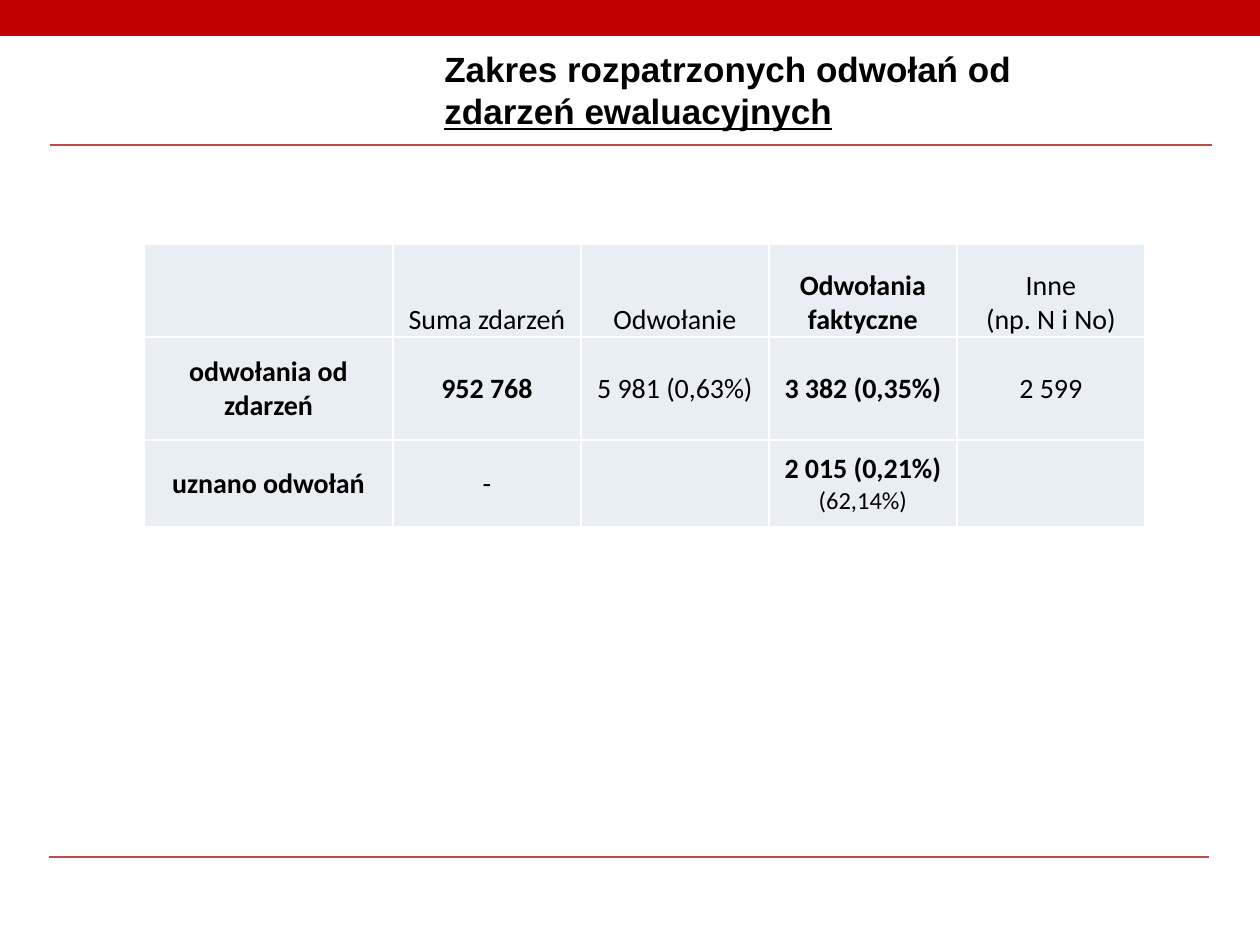
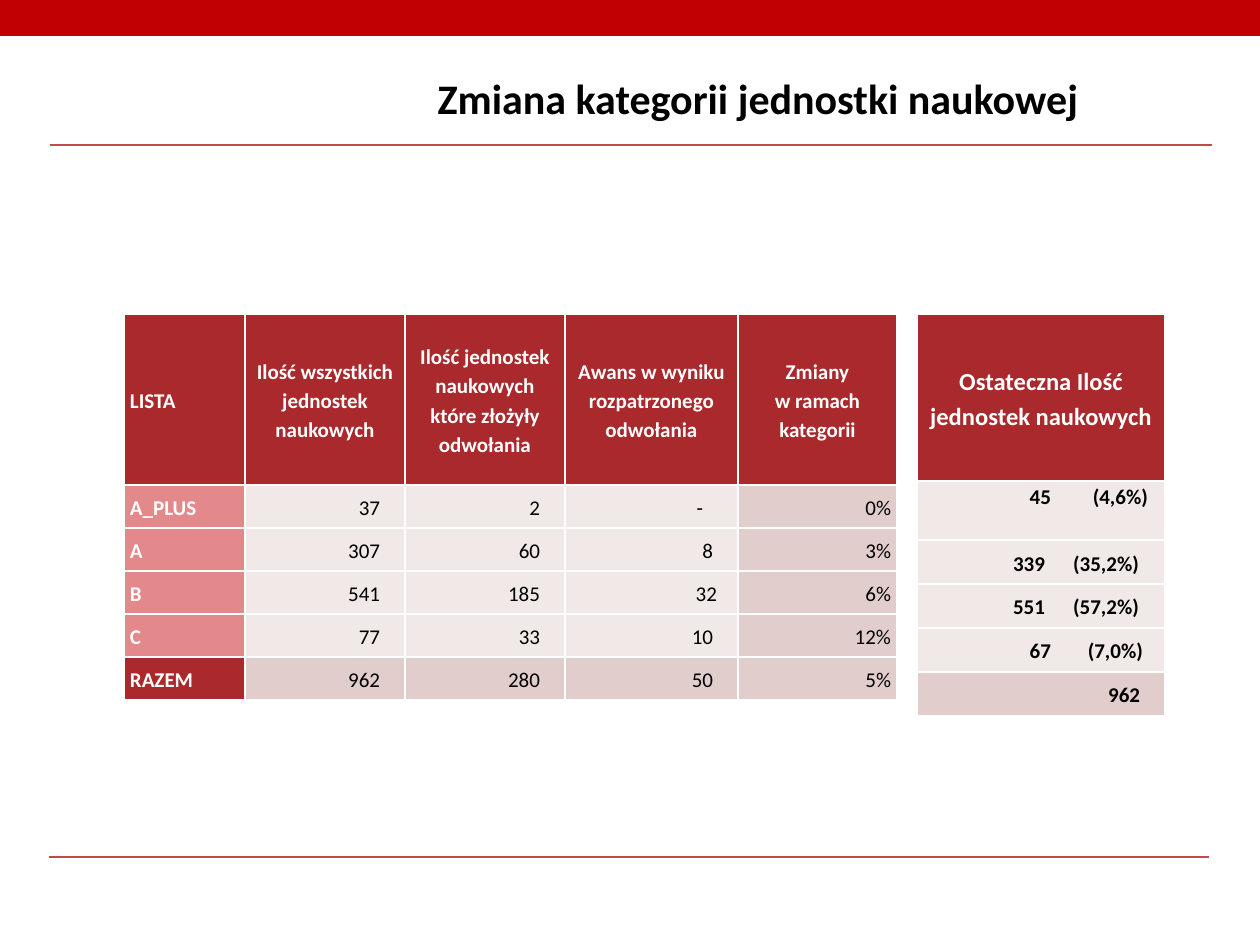
from pptx import Presentation
from pptx.dml.color import RGBColor
from pptx.enum.shapes import MSO_CONNECTOR as CONNECTOR, MSO_SHAPE as SHAPE
from pptx.enum.text import MSO_ANCHOR as ANCHOR, PP_ALIGN as ALIGN
from pptx.oxml.ns import qn
from pptx.util import Pt
from lxml.etree import SubElement

SCALE = 914400 / 126
WIDTH, HEIGHT = 1260, 945

BAND, RULE = "C00000", "BF4C48"
BLACK, WHITE = "000000", "FFFFFF"
PALE_BLUE = "E9EDF4"
DARK_RED, SOFT_RED = "AA292D", "E3898B"
PALE_PINK, PINK = "F1E8E8", "E2CDCD"

BOLD = {"bold": True}

APPEALS_TITLE = ["Zakres rozpatrzonych odwołań od",
                 ("zdarzeń ewaluacyjnych", {"underline": True})]
# Each cell is a list of lines; a line is a text or a (text, format) pair.
APPEALS = [
    [[], ["Suma zdarzeń"], ["Odwołanie"], [("Odwołania faktyczne", BOLD)],
     ["Inne", "(np. N i No)"]],
    [[("odwołania od zdarzeń", BOLD)], [("952 768", BOLD)], ["5 981 (0,63%)"],
     [("3 382 (0,35%)", BOLD)], ["2 599"]],
    [[("uznano odwołań", BOLD)], ["-"], [],
     [("2 015 (0,21%)", BOLD), ("(62,14%)", {"size": Pt(14)})], []],
]

CATEGORY_TITLE = ["Zmiana kategorii\u00a0jednostki\u00a0naukowej"]
CATEGORY_HEADER = [["LISTA"], ["Ilość wszystkich jednostek naukowych"],
                   ["Ilość jednostek naukowych które złożyły odwołania"],
                   ["Awans w wyniku rozpatrzonego odwołania"],
                   ["Zmiany", "w ramach kategorii"]]
CATEGORIES = [
    ("A_PLUS", "37", "2", "-", "0%"),
    ("A", "307", "60", "8", "3%"),
    ("B", "541", "185", "32", "6%"),
    ("C", "77", "33", "10", "12%"),
    ("RAZEM", "962", "280", "50", "5%"),
]
FINAL_HEADER = "Ostateczna Ilość jednostek naukowych"
# Count, share, and the right-aligned tab stops of both in px
FINAL_COUNTS = [
    ("45", "(4,6%)", (128, 225)),
    ("339", "(35,2%)", (122, 216)),
    ("551", "(57,2%)", (122, 216)),
    ("67", "(7,0%)", (128, 220)),
]
FINAL_TOTAL = "962"


def px(length):
    return round(length * SCALE)


def rgb(value):
    return RGBColor.from_string(value)


def apply(target, values):
    for name, value in values.items():
        setattr(target, name, value)


def write_lines(frame, lines, align=ALIGN.LEFT, spacing=1.0, tabs=(), color=BLACK, **font):
    """Write one paragraph per line, each with the shared font and its own changes."""
    for number, line in enumerate(lines):
        text, changes = (line, {}) if isinstance(line, str) else line
        para = frame.paragraphs[0] if number == 0 else frame.add_paragraph()
        apply(para, {"alignment": align, "line_spacing": spacing})
        if tabs:
            stops = SubElement(para._p.get_or_add_pPr(), qn("a:tabLst"))
            for stop in tabs:
                SubElement(stops, qn("a:tab"), pos=str(px(stop)), algn="r")
        span = para.add_run()
        span.text = text
        apply(span.font, {"name": "Calibri", **font, **changes})
        span.font.color.rgb = rgb(color)


def add_rule(page, left, right, y):
    rule = page.shapes.add_connector(CONNECTOR.STRAIGHT, px(left), px(y), px(right), px(y))
    rule.line.color.rgb = rgb(RULE)
    rule.line.width = Pt(0.75)
    SubElement(rule._element.spPr, qn("a:effectLst"))


def add_page(deck):
    """Add a blank page with the red band and both rules."""
    page = deck.slides.add_slide(deck.slide_layouts[6])
    band = page.shapes.add_shape(SHAPE.RECTANGLE, 0, 0, px(WIDTH), px(36))
    band.shadow.inherit = False
    band.fill.solid()
    band.fill.fore_color.rgb = rgb(BAND)
    band.line.fill.background()
    add_rule(page, 50, 1212, 145)
    add_rule(page, 49, 1209, 857)
    return page


def add_title(page, place, lines, wrap=True, **style):
    box = page.shapes.add_textbox(*map(px, place))
    apply(box.text_frame, {"word_wrap": wrap, "vertical_anchor": ANCHOR.MIDDLE})
    write_lines(box.text_frame, lines, bold=True, **style)


def add_grid(page, left, top, widths, heights):
    shape = page.shapes.add_table(len(heights), len(widths), px(left), px(top),
                                  px(sum(widths)), px(sum(heights)))
    table = shape.table
    apply(table, {"first_row": False, "horz_banding": False})
    for column, width in zip(table.columns, widths):
        column.width = px(width)
    for row, height in zip(table.rows, heights):
        row.height = px(height)
    return table


def fill_cell(cell, lines, fill, margins, anchor=ANCHOR.MIDDLE, **style):
    """Set white borders, fill, margins (left, top, right, bottom) and text."""
    properties = cell._tc.get_or_add_tcPr()
    for side in ("lnL", "lnR", "lnT", "lnB"):
        line = SubElement(properties, qn(f"a:{side}"), w=str(Pt(1)))
        SubElement(SubElement(line, qn("a:solidFill")), qn("a:srgbClr"), val=WHITE)
    cell.fill.solid()
    cell.fill.fore_color.rgb = rgb(fill)
    sides = ("margin_left", "margin_top", "margin_right", "margin_bottom")
    apply(cell, dict(zip(sides, map(px, margins))))
    cell.vertical_anchor = anchor
    write_lines(cell.text_frame, lines, **style)


def build_appeals(deck):
    page = add_page(deck)
    add_title(page, (432, 45, 665, 90), APPEALS_TITLE, name="Arial", size=Pt(20))
    table = add_grid(page, 144, 244, [249] + [188] * 4, [93, 103, 87])
    for r, row in enumerate(APPEALS):
        for c, lines in enumerate(row):
            fill_cell(table.cell(r, c), lines, PALE_BLUE, (1, 1, 1, 0),
                      ANCHOR.MIDDLE if r else ANCHOR.BOTTOM,
                      align=ALIGN.CENTER, size=Pt(16))


def fill_categories(page):
    table = add_grid(page, 124, 314, [121, 160, 160, 173, 159], [171] + [43] * 5)
    style = {"spacing": 1.15, "size": Pt(12)}
    label = {**style, "bold": True, "color": WHITE}
    for c, lines in enumerate(CATEGORY_HEADER):
        fill_cell(table.cell(0, c), lines, DARK_RED, (6, 0, 6, 0),
                  align=ALIGN.CENTER if c else ALIGN.LEFT, **label)
    indents = {"-": 35, "32": 21}
    for r, (name, *values) in enumerate(CATEGORIES, start=1):
        total = r == len(CATEGORIES)
        fill_cell(table.cell(r, 0), [name], DARK_RED if total else SOFT_RED,
                  (6, 0, 6, 0), **label)
        for c, value in enumerate(values, start=1):
            percent = value.endswith("%")
            right = 6 if percent else indents.get(value, 25)
            fill_cell(table.cell(r, c), [value], PINK if total or percent else PALE_PINK,
                      (6, 0, right, 0), align=ALIGN.RIGHT, **style)


def fill_final_counts(page):
    table = add_grid(page, 917, 314, [248], [167, 59] + [44] * 4)
    style = {"spacing": 1.15, "bold": True}
    fill_cell(table.cell(0, 0), [FINAL_HEADER], DARK_RED, (6, 0, 6, 0),
              align=ALIGN.CENTER, color=WHITE, size=Pt(14), **style)
    for r, (count, share, tabs) in enumerate(FINAL_COUNTS, start=1):
        fill_cell(table.cell(r, 0), [f"\t{count}\t{share}"], PALE_PINK, (6, 0, 6, 0),
                  ANCHOR.TOP if r == 1 else ANCHOR.MIDDLE,
                  tabs=tabs, size=Pt(12), **style)
    fill_cell(table.cell(5, 0), [FINAL_TOTAL], PINK, (6, 0, 25, 0),
              align=ALIGN.RIGHT, size=Pt(12), **style)


def build_categories(deck):
    page = add_page(deck)
    fill_categories(page)
    add_title(page, (422, 66, 672, 64), CATEGORY_TITLE, wrap=False,
              align=ALIGN.CENTER, size=Pt(24))
    fill_final_counts(page)


def main():
    deck = Presentation()
    apply(deck, {"slide_width": px(WIDTH), "slide_height": px(HEIGHT)})
    build_appeals(deck)
    build_categories(deck)
    deck.save("out.pptx")


if __name__ == "__main__":
    main()
